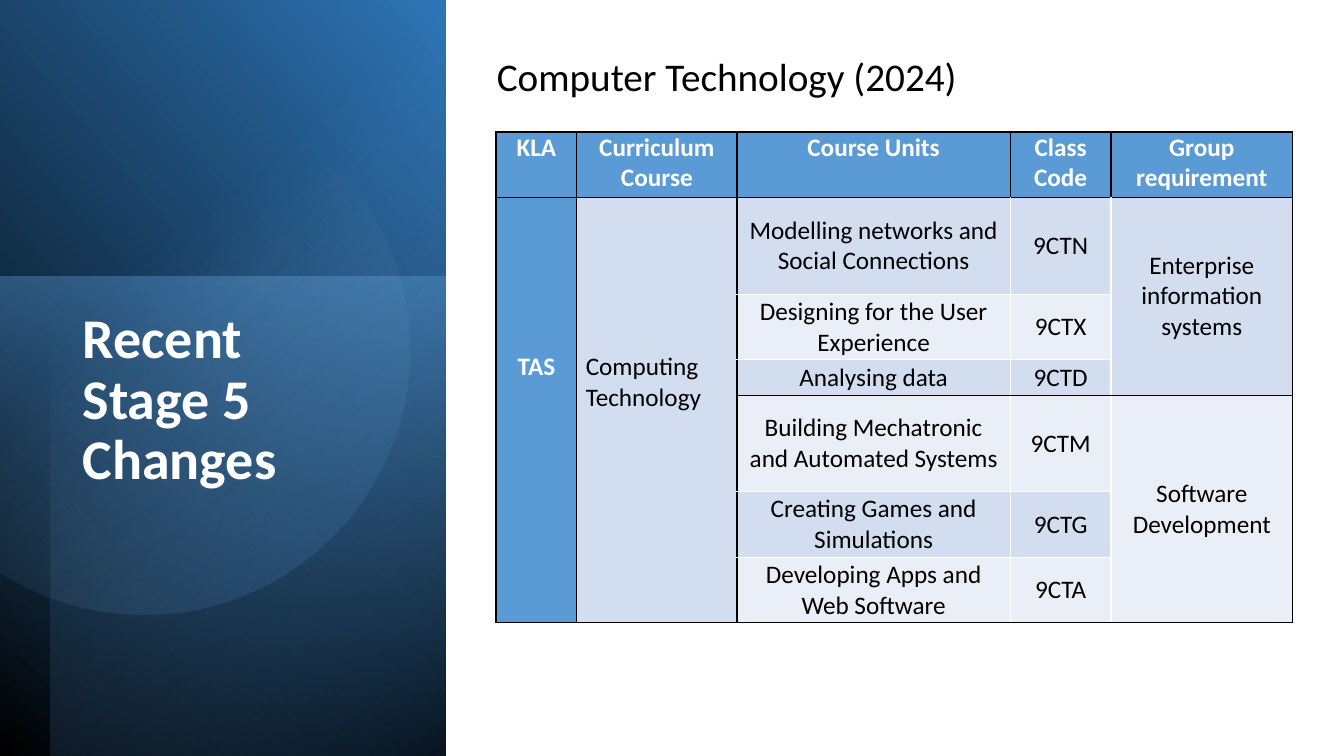
from math import acos, cos, sin
from lxml import etree
from pptx import Presentation
from pptx.dml.color import RGBColor as RGB
from pptx.enum.shapes import MSO_SHAPE as Kind
from pptx.enum.text import MSO_ANCHOR as Anchor, MSO_AUTO_SIZE as Fit, PP_ALIGN as Align
from pptx.oxml.ns import qn
from pptx.util import Inches, Pt

INK = {"black": "000000", "white": "FFFFFF", "blue": "5B9BD5", "deep": "2E75B6",
       "navy": "1F4E79", "sky": "9DC3E6", "band": "D2DEEF", "pale": "EAEFF7"}
HEADS = ["KLA", "Curriculum Course", "Course Units", "Class Code", "Group requirement"]
UNITS = [("Modelling networks and Social Connections", "9CTN"),
         ("Designing for the User Experience", "9CTX"),
         ("Analysing data", "9CTD"),
         ("Building Mechatronic and Automated Systems", "9CTM"),
         ("Creating Games and Simulations", "9CTG"),
         ("Developing Apps and Web Software", "9CTA")]
GROUPS = {1: "Enterprise information systems", 4: "Software Development"}
WIDTHS = [0.8, 1.59, 2.71, 1, 1.8]
HEIGHTS = [0.65, 0.96, 0.65, 0.35, 0.96, 0.65, 0.65]


def add_solid(node, tone):
    """Put a solid colour under an XML node and return the colour element."""
    fill = etree.SubElement(node, qn("a:solidFill"))
    return etree.SubElement(fill, qn("a:srgbClr"), val=INK[tone])


def fade(shape, stops, angle):
    """Give a shape a linear gradient of (position, tone, opacity) stops."""
    shape.shadow.inherit = False
    shape.line.fill.background()
    shape.fill.gradient()
    grad = shape.element.spPr.find(qn("a:gradFill"))
    for part in list(grad):
        grad.remove(part)
    grad.set("rotWithShape", "1")
    row = etree.SubElement(grad, qn("a:gsLst"))
    for place, tone, alpha in stops:
        stop = etree.SubElement(row, qn("a:gs"), pos=str(place * 1000))
        hue = etree.SubElement(stop, qn("a:srgbClr"), val=INK[tone])
        if alpha < 100:
            etree.SubElement(hue, qn("a:alpha"), val=str(alpha * 1000))
    etree.SubElement(grad, qn("a:lin"), ang=str(round(angle * 60000)), scaled="0")


def add_panel(slide, box, turn, flip, stops, angle):
    """Draw a turned rectangle with a gradient."""
    panel = slide.shapes.add_shape(Kind.RECTANGLE, *map(Inches, box))
    panel.rotation = turn
    if flip:
        panel.element.spPr.xfrm.set("flipH", "1")
    fade(panel, stops, angle)


def add_disc(slide, x, y, r, stops, angle):
    """Draw a disc that is cut off at the left edge of the slide."""
    end = acos(-x / r)
    steps = 120
    turns = [end * (2 * i / steps - 1) for i in range(steps + 1)]
    dots = [(Inches(x + r * cos(t)), Inches(y + r * sin(t))) for t in turns]
    build = slide.shapes.build_freeform(*dots[0])
    build.add_line_segments(dots[1:], close=True)
    fade(build.convert_to_shape(), stops, angle)


def add_run(para, text, size, tone, bold=False):
    """Add one formatted run to a paragraph."""
    run = para.add_run()
    run.text = text
    run.font.name = "Calibri"
    run.font.size = Pt(size)
    run.font.bold = bold
    run.font.color.rgb = RGB.from_string(INK[tone])


def set_title(slide, text):
    """Place and format the title in front of the panels."""
    title = slide.shapes.title
    title.left, title.top, title.width, title.height = map(Inches, (0.72, 3.03, 3.15, 3.36))
    frame = title.text_frame
    frame.word_wrap, frame.auto_size = True, Fit.NONE
    frame.vertical_anchor = Anchor.TOP
    para = frame.paragraphs[0]
    para.alignment, para.line_spacing = Align.LEFT, 0.9
    add_run(para, text, 40, "white", True)
    title.element.getparent().append(title.element)


def add_label(slide, box, text):
    """Add the heading above the table."""
    frame = slide.shapes.add_textbox(*map(Inches, box)).text_frame
    frame.word_wrap = True
    para = frame.paragraphs[0]
    para.line_spacing, para.space_before = 0.9, Pt(10)
    add_run(para, text, 28, "black")


def set_edges(cell, row, col):
    """Draw black lines round the blocks and white lines inside them."""
    solid = row == 0 or col < 2
    dark = {"L": solid or col == 2, "R": solid or col == 4,
            "T": solid or col == 4 or row in (1, 4),
            "B": solid or col == 4 or row in (3, 6)}
    props = cell._tc.get_or_add_tcPr()
    for side, black in dark.items():
        line = etree.SubElement(props, qn(f"a:ln{side}"), w=str(Pt(1)))
        add_solid(line, "black" if black else "white")


def set_cell(table, row, col, text):
    """Style one cell and write its text."""
    cell = table.cell(row, col)
    head = row == 0 or col == 0
    set_edges(cell, row, col)
    cell.fill.solid()
    tone = "blue" if head else "band" if col == 1 or row % 2 else "pale"
    cell.fill.fore_color.rgb = RGB.from_string(INK[tone])
    cell.margin_left = cell.margin_right = Inches(0.09)
    cell.margin_top = Inches(1.53 if row and col < 2 else 0)
    cell.margin_bottom = 0
    cell.vertical_anchor = Anchor.MIDDLE if row and col > 1 else Anchor.TOP
    if text:
        para = cell.text_frame.paragraphs[0]
        para.alignment = Align.LEFT if row and col == 1 else Align.CENTER
        add_run(para, text, 18, "white" if head else "black", head)


def add_courses(slide):
    """Build the table of course units."""
    size = len(HEIGHTS), len(WIDTHS)
    box = 4.92, 1.31, sum(WIDTHS), sum(HEIGHTS)
    table = slide.shapes.add_table(*size, *map(Inches, box)).table
    for col, width in zip(table.columns, WIDTHS):
        col.width = Inches(width)
    for row, height in zip(table.rows, HEIGHTS):
        row.height = Inches(height)
    rows = [HEADS]
    for i, (unit, code) in enumerate(UNITS, 1):
        lead = ["TAS", "Computing Technology"] if i == 1 else ["", ""]
        rows.append([*lead, unit, code, GROUPS.get(i, "")])
    for r, words in enumerate(rows):
        for c, text in enumerate(words):
            set_cell(table, r, c, text)
    for top, end, col in [(1, 6, 0), (1, 6, 1), (1, 3, 4), (4, 6, 4)]:
        table.cell(top, col).merge(table.cell(end, col))
    # pale band for the second group
    group = table.cell(4, 4)
    group.fill.fore_color.rgb = RGB.from_string(INK["pale"])


def main():
    """Build the slide and save it."""
    deck = Presentation()
    deck.slide_width, deck.slide_height = Inches(13.33), Inches(7.5)
    slide = deck.slides.add_slide(deck.slide_layouts[5])
    add_panel(slide, (-1.55, 1.55, 7.52, 4.42), 90, True,
              [(0, "black", 100), (100, "deep", 100)], 310)
    add_panel(slide, (-0.17, 2.91, 4.76, 4.42), 270, False,
              [(0, "blue", 50), (100, "navy", 0)], 190)
    add_panel(slide, (-1.29, 1.79, 7.5, 3.92), 270, True,
              [(0, "black", 59), (69, "blue", 0)], 220)
    add_disc(slide, 1.43, 3.47, 2.63, [(39, "sky", 0), (100, "deep", 26)], 51.6)
    set_title(slide, "Recent Stage 5 Changes")
    add_courses(slide)
    add_label(slide, (4.83, 0.52, 6.67, 0.53), "Computer Technology (2024)")
    deck.save("out.pptx")


if __name__ == "__main__":
    main()
